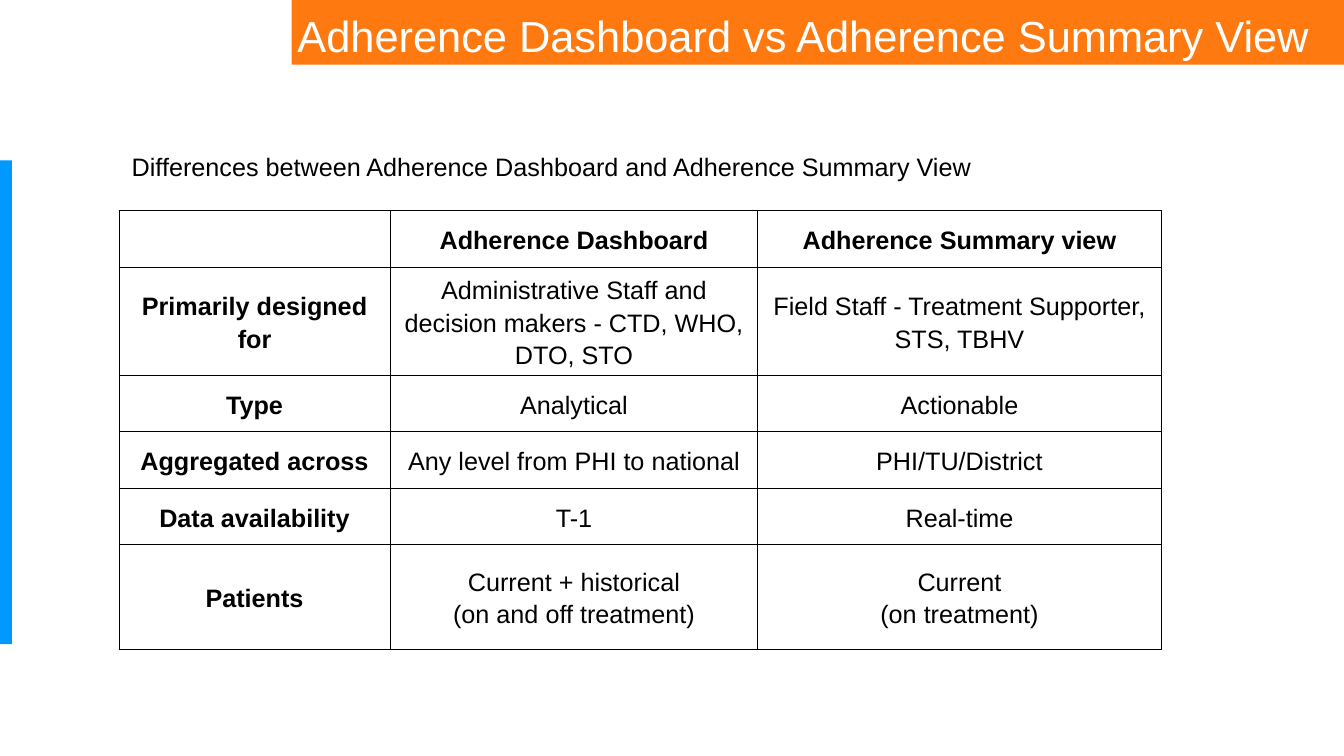
from typing import NamedTuple

from lxml.etree import SubElement
from pptx import Presentation
from pptx.dml.color import RGBColor
from pptx.enum.shapes import MSO_SHAPE
from pptx.enum.text import MSO_ANCHOR, MSO_AUTO_SIZE, PP_ALIGN
from pptx.oxml.ns import qn
from pptx.util import Cm, Pt

COLORS = {"orange": "FE7A10", "blue": "0099FF", "black": "000000", "white": "FFFFFF"}
FONT = "Arial"
TITLE_ONLY_LAYOUT = 5


class Box(NamedTuple):
    left: float
    top: float
    width: float
    height: float

    def lengths(self) -> list:
        return [Cm(value) for value in self]


class Bar(NamedTuple):
    box: Box
    color: str


BARS = [
    Bar(Box(7.35, 0, 26.52, 1.63), "orange"),
    Bar(Box(0, 4.04, 0.3, 12.19), "blue"),
]
TITLE_BOX = Box(7.24, 0, 26.24, 1.93)
CAPTION_BOX = Box(2.51, 3.68, 29.49, 1.02)
TABLE_BOX = Box(3, 5.31, 26.26, 11)

COLUMN_WIDTHS = [6.83, 9.27, 10.16]
SINGLE_LINE, MULTI_LINE = 1.42, 2.64
ROW_HEIGHTS = [SINGLE_LINE, MULTI_LINE] + [SINGLE_LINE] * 3 + [MULTI_LINE]
COMPARISON = [
    ("", "Adherence Dashboard", "Adherence Summary view"),
    (
        "Primarily designed for",
        "Administrative Staff and decision makers - CTD, WHO, DTO, STO",
        "Field Staff - Treatment Supporter, STS, TBHV",
    ),
    ("Type", "Analytical", "Actionable"),
    ("Aggregated across", "Any level from PHI to national", "PHI/TU/District"),
    ("Data availability", "T-1", "Real-time"),
    (
        "Patients",
        "Current + historical\n(on and off treatment)",
        "Current\n(on treatment)",
    ),
]


def rgb(name: str) -> RGBColor:
    return RGBColor.from_string(COLORS[name])


def write_text(text_frame, text: str, *, size: float = 18, color: str = "black",
               bold: bool = False, align=PP_ALIGN.LEFT, spacing: float = 1.0) -> None:
    text_frame.text = text
    text_frame.word_wrap = True
    for paragraph in text_frame.paragraphs:
        paragraph.alignment = align
        paragraph.line_spacing = spacing
        font = paragraph.font
        font.name, font.size, font.bold = FONT, Pt(size), bold
        font.color.rgb = rgb(color)


def place(shape, box: Box) -> None:
    shape.left, shape.top, shape.width, shape.height = box.lengths()


def add_bar(slide, bar: Bar) -> None:
    """Draw a decorative bar behind the title."""
    shape = slide.shapes.add_shape(MSO_SHAPE.RECTANGLE, *bar.box.lengths())
    shape.shadow.inherit = False
    shape.fill.solid()
    shape.fill.fore_color.rgb = rgb(bar.color)
    shape.line.fill.background()
    slide.shapes.title.element.addprevious(shape.element)


def format_title(slide) -> None:
    title = slide.shapes.title
    place(title, TITLE_BOX)
    text_frame = title.text_frame
    write_text(text_frame, "Adherence Dashboard vs Adherence Summary View",
               size=31, color="white", spacing=0.9)
    text_frame.auto_size = MSO_AUTO_SIZE.NONE
    text_frame.vertical_anchor = MSO_ANCHOR.MIDDLE


def add_caption(slide) -> None:
    caption = slide.shapes.add_textbox(*CAPTION_BOX.lengths())
    write_text(caption.text_frame,
               "Differences between Adherence Dashboard and Adherence Summary View")
    properties = caption.text_frame.paragraphs[0]._p.get_or_add_pPr()
    properties.set("marL", str(Cm(0.79)))
    properties.set("indent", str(Cm(-0.23)))


def add_borders(cell, color: str, width: float) -> None:
    properties = cell._tc.get_or_add_tcPr()
    for side in ("L", "R", "T", "B"):
        line = SubElement(properties, qn(f"a:ln{side}"), w=str(Pt(width)))
        fill = SubElement(line, qn("a:solidFill"))
        SubElement(fill, qn("a:srgbClr"), val=COLORS[color])


def format_cell(cell, text: str, bold: bool) -> None:
    write_text(cell.text_frame, text, bold=bold, align=PP_ALIGN.CENTER, spacing=1.15)
    cell.vertical_anchor = MSO_ANCHOR.MIDDLE
    cell.margin_left = cell.margin_right = Cm(0.08)
    cell.margin_top = cell.margin_bottom = Cm(0.05)
    add_borders(cell, "black", 0.75)
    cell.fill.background()


def add_comparison_table(slide) -> None:
    table = slide.shapes.add_table(
        len(COMPARISON), len(COLUMN_WIDTHS), *TABLE_BOX.lengths()).table
    table.first_row = table.horz_banding = False
    for column, width in zip(table.columns, COLUMN_WIDTHS):
        column.width = Cm(width)
    for row, height in zip(table.rows, ROW_HEIGHTS):
        row.height = Cm(height)
    for row_index, texts in enumerate(COMPARISON):
        for column_index, text in enumerate(texts):
            is_heading = row_index == 0 or column_index == 0
            format_cell(table.cell(row_index, column_index), text, is_heading)


def main() -> None:
    presentation = Presentation()
    presentation.slide_width, presentation.slide_height = Cm(33.87), Cm(19.05)
    layout = presentation.slide_layouts[TITLE_ONLY_LAYOUT]
    slide = presentation.slides.add_slide(layout)
    for bar in BARS:
        add_bar(slide, bar)
    format_title(slide)
    add_caption(slide)
    add_comparison_table(slide)
    presentation.save("out.pptx")


if __name__ == "__main__":
    main()
